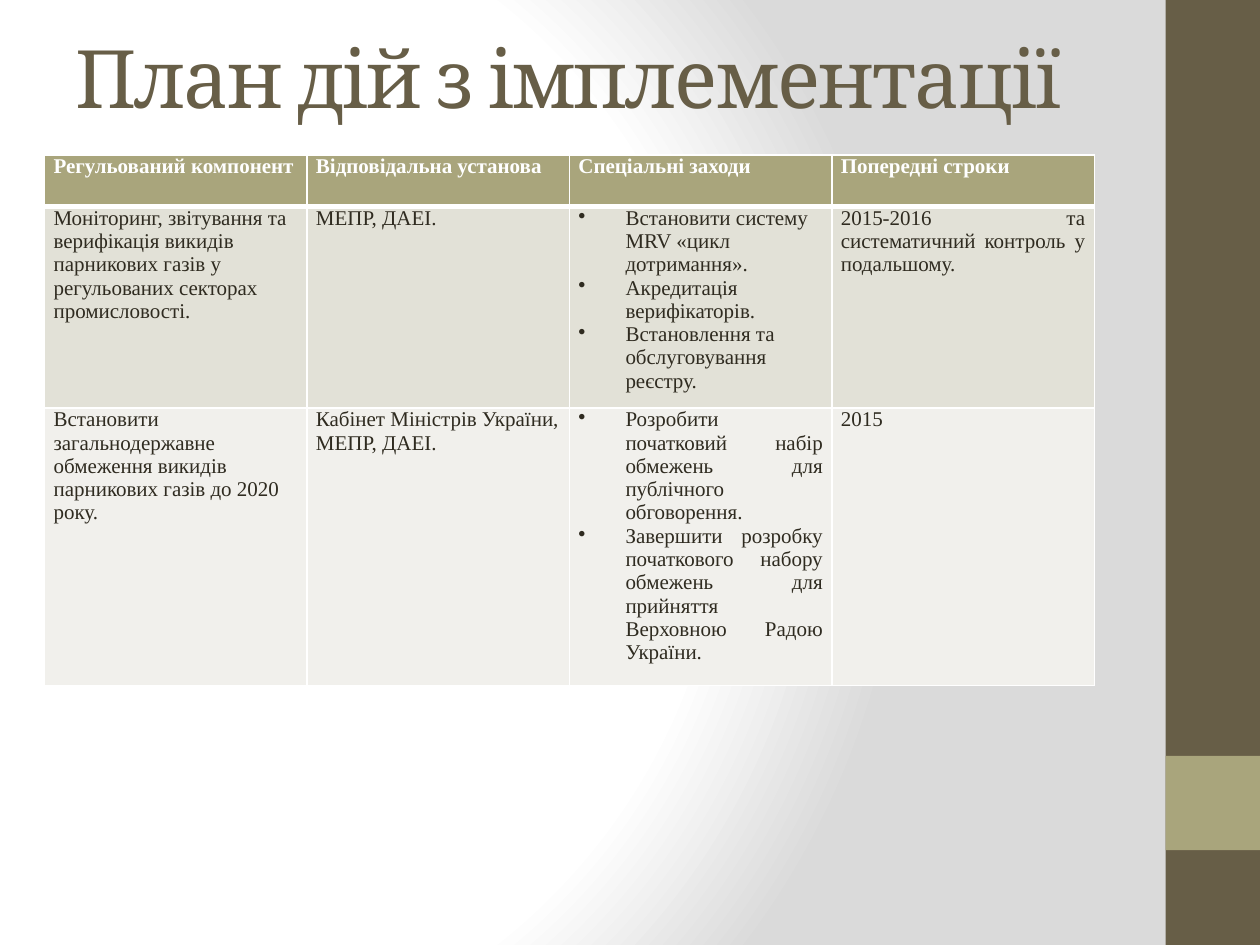
from dataclasses import dataclass

import pptx
import pptx.dml.color
import pptx.enum.shapes
import pptx.enum.text
import pptx.oxml
import pptx.oxml.ns
import pptx.util

Cm = pptx.util.Cm
Pt = pptx.util.Pt
LEFT = pptx.enum.text.PP_ALIGN.LEFT
JUSTIFY = pptx.enum.text.PP_ALIGN.JUSTIFY


@dataclass(frozen=True)
class Theme:
    brown: str = "675E47"
    olive: str = "A9A57C"
    text: str = "2F2B20"
    white: str = "FFFFFF"
    grey: str = "DADADA"
    band_dark: str = "E2E1D7"
    band_light: str = "F1F0EC"
    title_font: str = "Cambria"
    table_font: str = "Times New Roman"
    title_size: int = 46
    table_size: int = 12
    rule: int = 1
    header_rule: int = 3


@dataclass(frozen=True)
class Entry:
    """Content of one table cell."""
    lines: tuple
    align: int = LEFT
    bulleted: bool = False


HEADERS = ("Регульований компонент", "Відповідальна установа",
           "Спеціальні заходи", "Попередні строки")
ACTIONS = (
    (
        Entry(("Моніторинг, звітування та верифікація викидів парникових газів "
               "у регульованих секторах промисловості.",)),
        Entry(("МЕПР, ДАЕІ.",), JUSTIFY),
        Entry(("Встановити систему MRV «цикл дотримання».",
               "Акредитація верифікаторів.",
               "Встановлення та обслуговування реєстру."), LEFT, True),
        Entry(("2015-2016 та систематичний контроль у подальшому.",), JUSTIFY),
    ),
    (
        Entry(("Встановити загальнодержавне обмеження викидів парникових газів "
               "до 2020 року.",)),
        Entry(("Кабінет Міністрів України, МЕПР, ДАЕІ.",)),
        Entry(("Розробити початковий набір обмежень для публічного обговорення.",
               "Завершити розробку початкового набору обмежень для прийняття "
               "Верховною Радою України."), JUSTIFY, True),
        Entry(("2015",), JUSTIFY),
    ),
)


def rgb(value):
    return pptx.dml.color.RGBColor.from_string(value)


def apply(target, formats):
    for name, value in formats.items():
        setattr(target, name, value)


def xml(tag, body):
    """Element from its tag and the rest of its markup, attributes first."""
    return pptx.oxml.parse_xml(f"<{tag} {pptx.oxml.ns.nsdecls('a', 'p')} {body}")


class SlideBuilder:
    def __init__(self, slide, theme):
        self.slide = slide
        self.theme = theme

    def background(self):
        """Radial fade from white on the left to grey on the right."""
        stops = "".join(
            f'<a:gs pos="{percent * 1000}"><a:srgbClr val="{color}"/></a:gs>'
            for percent, color in ((0, self.theme.white), (75, self.theme.white),
                                   (100, self.theme.grey)))
        fade = xml("p:bg", f'><p:bgPr><a:gradFill rotWithShape="1"><a:gsLst>{stops}</a:gsLst>'
                   '<a:path path="circle"><a:fillToRect l="20000" t="50000" '
                   'r="100000" b="50000"/></a:path></a:gradFill><a:effectLst/>'
                   '</p:bgPr></p:bg>')
        self.slide.element.cSld.insert(0, fade)

    def block(self, left, top, width, height, color):
        block = self.slide.shapes.add_shape(
            pptx.enum.shapes.MSO_SHAPE.RECTANGLE, Cm(left), Cm(top), Cm(width), Cm(height))
        block.shadow.inherit = False
        block.fill.solid()
        block.fill.fore_color.rgb = rgb(color)
        block.line.fill.background()

    def title(self, text, left, top, width, height):
        frame = self.slide.shapes.add_textbox(
            Cm(left), Cm(top), Cm(width), Cm(height)).text_frame
        apply(frame, {"word_wrap": True,
                      "vertical_anchor": pptx.enum.text.MSO_ANCHOR.MIDDLE})
        run = self.styled_run(frame.paragraphs[0], text, self.theme.brown,
                              name=self.theme.title_font, size=Pt(self.theme.title_size))
        run._r.get_or_add_rPr().set("spc", "-100")

    def styled_run(self, paragraph, text, color, **formats):
        run = paragraph.add_run()
        run.text = text
        apply(run.font, formats)
        run.font.color.rgb = rgb(color)
        return run

    def table(self, left, top, column_width, row_heights, headers, rows):
        theme = self.theme
        table = self.slide.shapes.add_table(
            len(row_heights), len(headers), Cm(left), Cm(top),
            Cm(column_width * len(headers)), Cm(sum(row_heights))).table
        for row, height in zip(table.rows, row_heights):
            row.height = Cm(height)
        for column, header in enumerate(headers):
            self.cell(table.cell(0, column), Entry((header,), JUSTIFY), theme.olive,
                      theme.white, bold=True, bottom=theme.header_rule)
        bands = (theme.band_dark, theme.band_light)
        for index, (entries, band) in enumerate(zip(rows, bands), start=1):
            top_rule = theme.header_rule if index == 1 else theme.rule
            for column, entry in enumerate(entries):
                self.cell(table.cell(index, column), entry, band, theme.text, top=top_rule)

    def cell(self, cell, entry, fill, color, bold=False, top=None, bottom=None):
        apply(cell, {"margin_left": Cm(0.18), "margin_right": Cm(0.18),
                     "margin_top": 0, "margin_bottom": 0})
        cell.fill.solid()
        cell.fill.fore_color.rgb = rgb(fill)
        self.borders(cell, top or self.theme.rule, bottom or self.theme.rule)
        frame = cell.text_frame
        for index, line in enumerate(entry.lines):
            paragraph = frame.add_paragraph() if index else frame.paragraphs[0]
            paragraph.alignment = entry.align
            if entry.bulleted:
                self.bullet(paragraph)
            self.styled_run(paragraph, line, color, name=self.theme.table_font,
                            size=Pt(self.theme.table_size), bold=bold)

    def borders(self, cell, top, bottom):
        sides = {"L": self.theme.rule, "R": self.theme.rule, "T": top, "B": bottom}
        properties = cell._tc.get_or_add_tcPr()
        for index, (side, width) in enumerate(sides.items()):
            properties.insert(index, xml(
                f"a:ln{side}", f'w="{Pt(width)}"><a:solidFill><a:srgbClr '
                f'val="{self.theme.white}"/></a:solidFill></a:ln{side}>'))

    def bullet(self, paragraph):
        properties = paragraph._p.get_or_add_pPr()
        hang = Cm(0.95)
        properties.set("marL", str(hang))
        properties.set("indent", str(-hang))
        properties.append(xml("a:buChar", 'char="•"/>'))


def main():
    presentation = pptx.Presentation()
    apply(presentation, {"slide_width": Cm(25.4), "slide_height": Cm(19.05)})
    theme = Theme()
    builder = SlideBuilder(
        presentation.slides.add_slide(presentation.slide_layouts[6]), theme)
    builder.background()
    builder.block(23.5, 0, 1.9, 19.05, theme.brown)
    builder.block(23.5, 15.24, 1.9, 1.9, theme.olive)
    builder.title("План дій з імплементації", 1.27, 0.76, 21.17, 1.55)
    builder.table(0.9, 3.12, 5.29, (1.04, 3.75, 5.17), HEADERS, ACTIONS)
    presentation.save("out.pptx")


if __name__ == "__main__":
    main()
